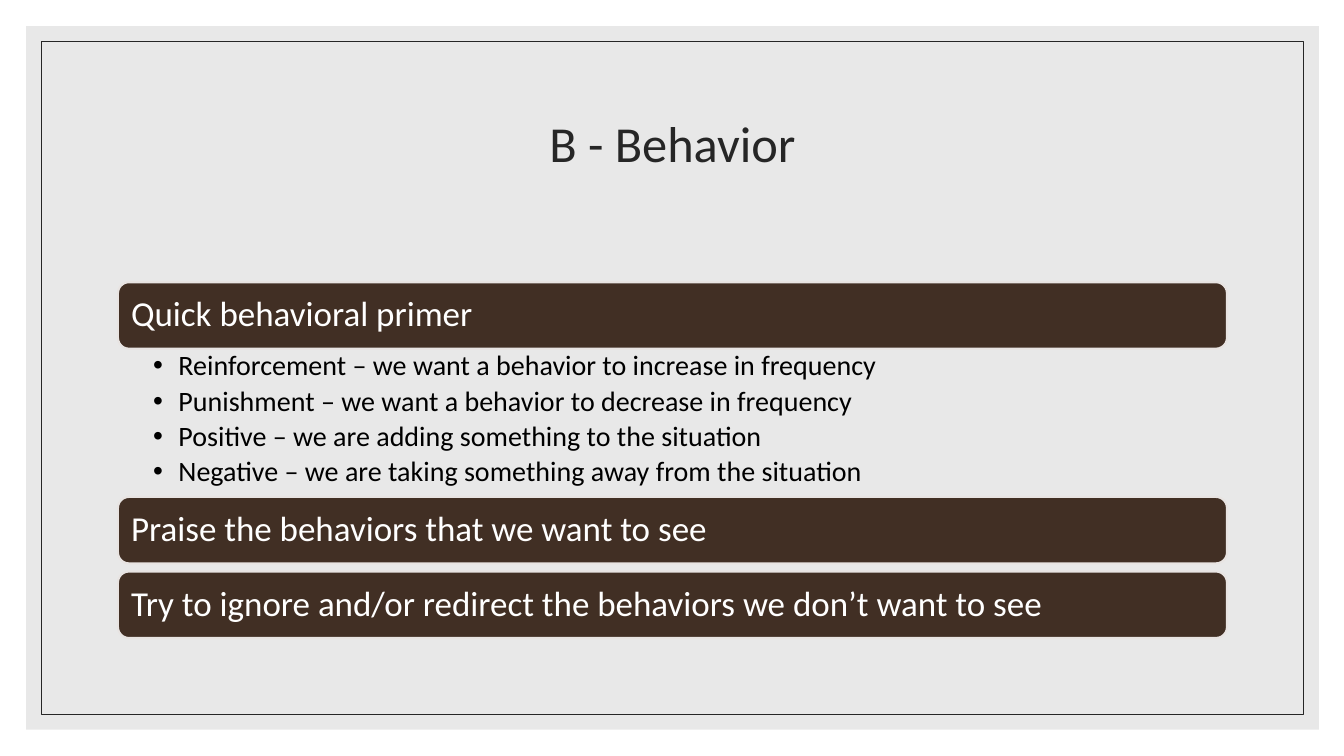
from dataclasses import dataclass

from lxml import etree
from pptx import Presentation
from pptx import util as u
from pptx.dml.color import RGBColor
from pptx.enum import shapes, text
from pptx.oxml import ns


@dataclass(frozen=True)
class Theme:
    font: str = "Calibri"
    ink: str = "262626"
    panel: str = "D9D9D9"
    panel_opacity: int = 60
    bar: str = "412F24"
    bar_edge: str = "E8E4E2"
    bar_text: str = "FFFFFF"
    bullet_text: str = "000000"
    title_size: int = 36
    bar_size: int = 25
    bullet_size: int = 20


THEME = Theme()
LEFT, WIDTH = 1.17, 11
BAR_HEIGHT, BAR_GAP, BULLETS_HEIGHT = 0.66, 0.08, 1.47
SECTIONS = [
    ("Quick behavioral primer", [
        "Reinforcement – we want a behavior to increase in frequency",
        "Punishment – we want a behavior to decrease in frequency",
        "Positive – we are adding something to the situation",
        "Negative – we are taking something away from the situation",
    ]),
    ("Praise the behaviors that we want to see", []),
    ("Try to ignore and/or redirect the behaviors we don’t want to see", []),
]


def apply(target, values):
    for name, value in values.items():
        setattr(target, name, value)


def inches(*lengths):
    return [u.Inches(length) for length in lengths]


def write(frame, lines, size, color, insets, anchor, align=text.PP_ALIGN.LEFT, after=0):
    sides = ("margin_left", "margin_top", "margin_right", "margin_bottom")
    apply(frame, dict(zip(sides, inches(*insets)), word_wrap=True, vertical_anchor=anchor))
    for index, line in enumerate(lines):
        paragraph = frame.add_paragraph() if index else frame.paragraphs[0]
        paragraph.text = line
        apply(paragraph, {"alignment": align, "line_spacing": 0.9, "space_after": u.Pt(after)})
        apply(paragraph.font, {"name": THEME.font, "size": u.Pt(size)})
        paragraph.font.color.rgb = RGBColor.from_string(color)


def add_block(slide, kind, box, fill=None, edge=None, edge_width=0, opacity=100):
    block = slide.shapes.add_shape(kind, *inches(*box))
    block.shadow.inherit = False
    if fill:
        block.fill.solid()
        block.fill.fore_color.rgb = RGBColor.from_string(fill)
    else:
        block.fill.background()
    if opacity < 100:
        tint = block.fill._xPr.find(".//" + ns.qn("a:srgbClr"))
        etree.SubElement(tint, ns.qn("a:alpha"), val=str(opacity * 1000))
    if edge:
        block.line.color.rgb = RGBColor.from_string(edge)
        block.line.width = u.Pt(edge_width)
    else:
        block.line.fill.background()
    return block


def add_title(slide, title):
    heading = slide.shapes.add_textbox(*inches(LEFT, 0.7, WIDTH, 1.5))
    write(heading.text_frame, [title], THEME.title_size, THEME.ink,
          (0.1, 0.05, 0.1, 0.05), text.MSO_ANCHOR.MIDDLE, text.PP_ALIGN.CENTER)


def add_bar(slide, top, label):
    bar = add_block(slide, shapes.MSO_SHAPE.ROUNDED_RECTANGLE, (LEFT, top, WIDTH, BAR_HEIGHT),
                    THEME.bar, THEME.bar_edge, 1.5)
    write(bar.text_frame, [label], THEME.bar_size, THEME.bar_text,
          (0.1, 0.1, 0.1, 0.1), text.MSO_ANCHOR.MIDDLE)


def add_bullets(slide, top, points):
    bullets = slide.shapes.add_textbox(*inches(LEFT, top, WIDTH, BULLETS_HEIGHT))
    write(bullets.text_frame, points, THEME.bullet_size, THEME.bullet_text,
          (0.35, 0.03, 0.19, 0.03), text.MSO_ANCHOR.TOP, after=3.6)
    indent = u.Inches(0.25)
    for paragraph in bullets.text_frame.paragraphs:
        paragraph.level = 1
        properties = paragraph._p.get_or_add_pPr()
        properties.set("marL", str(indent))
        properties.set("indent", str(-indent))
        etree.SubElement(properties, ns.qn("a:buFont"), typeface="Arial")
        etree.SubElement(properties, ns.qn("a:buChar"), char="•")


def add_sections(slide, top):
    for label, points in SECTIONS:
        add_bar(slide, top, label)
        top += BAR_HEIGHT
        if points:
            add_bullets(slide, top, points)
        top += BULLETS_HEIGHT if points else BAR_GAP


def main():
    deck = Presentation()
    apply(deck, {"slide_width": u.Inches(13.33), "slide_height": u.Inches(7.5)})
    slide = deck.slides.add_slide(deck.slide_layouts[6])
    rectangle = shapes.MSO_SHAPE.RECTANGLE
    add_block(slide, rectangle, (0.26, 0.26, 12.82, 6.98), THEME.panel,
              opacity=THEME.panel_opacity)
    add_block(slide, rectangle, (0.41, 0.41, 12.52, 6.68), edge=THEME.ink, edge_width=0.5)
    add_title(slide, "B - Behavior")
    add_sections(slide, 2.8)
    deck.save("out.pptx")


if __name__ == "__main__":
    main()
